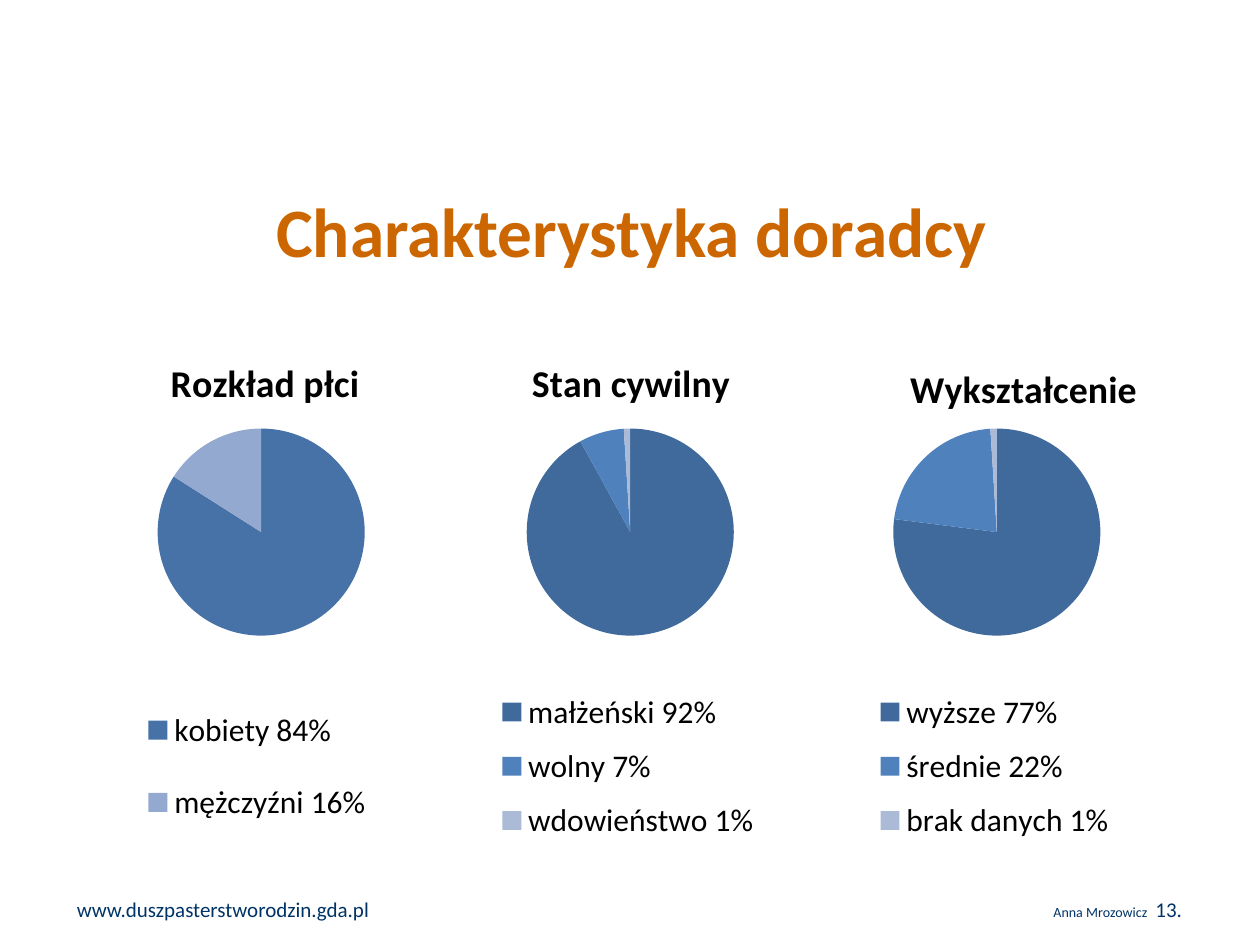
from lxml.etree import SubElement
from pptx import Presentation
from pptx.chart.data import CategoryChartData
from pptx.dml.color import RGBColor
from pptx.enum.chart import XL_CHART_TYPE, XL_LEGEND_POSITION
from pptx.enum.text import MSO_ANCHOR, PP_ALIGN
from pptx.oxml.ns import qn
from pptx.util import Cm, Pt


def style(font, size, color, bold=False):
    font.name = "Calibri"
    font.size = Pt(size)
    font.bold = bold
    font.color.rgb = RGBColor.from_string(color)


def set_layout(part, next_tag, **fractions):
    """Fix a chart part at fractions of the chart area, before its child next_tag."""
    for old in part.findall(qn("c:layout")):
        part.remove(old)
    layout = SubElement(part, qn("c:layout"))
    part.find(qn(next_tag)).addprevious(layout)
    manual = SubElement(layout, qn("c:manualLayout"))
    if next_tag == "c:pieChart":
        SubElement(manual, qn("c:layoutTarget")).set("val", "inner")
    for axis in "xy":
        SubElement(manual, qn(f"c:{axis}Mode")).set("val", "edge")
    for key, value in fractions.items():
        SubElement(manual, qn(f"c:{key}")).set("val", str(value))


prs = Presentation()
prs.slide_width, prs.slide_height = Cm(25.4), Cm(19.05)
slide = prs.slides.add_slide(prs.slide_layouts[6])

NAVY = "003366"
texts = [
    (1.3, 3.73, 22.86, 1.8, PP_ALIGN.CENTER, [("Charakterystyka doradcy", 39.6, "CC6600", True)]),
    (1.3, 17.93, 8.05, 0.81, PP_ALIGN.LEFT, [("www.duszpasterstworodzin.gda.pl", 12, NAVY, False)]),
    (18.29, 17.93, 5.79, 0.81, PP_ALIGN.RIGHT,
     [("Anna Mrozowicz ", 8, NAVY, False), (" 13.", 12, NAVY, False)]),
]
for left, top, width, height, align, runs in texts:
    frame = slide.shapes.add_textbox(Cm(left), Cm(top), Cm(width), Cm(height)).text_frame
    frame.word_wrap = True
    frame.vertical_anchor = MSO_ANCHOR.MIDDLE
    paragraph = frame.paragraphs[0]
    paragraph.alignment = align
    for wording, size, color, bold in runs:
        run = paragraph.add_run()
        run.text = wording
        style(run.font, size, color, bold)

TWO_BLUES = ["4672A8", "93A9CF"]
THREE_BLUES = ["40699C", "4F81BD", "AABAD7"]
# left edge, heading, its x and y, legend x and width, shares, slice colours
pies = [
    (1.27, "Rozkład płci", 0.26, 0.11, 0.2, 0.6,
     {"kobiety": 84, "mężczyźni": 16}, TWO_BLUES),
    (8.71, "Stan cywilny", 0.24, 0.11, 0.16, 0.69,
     {"małżeński": 92, "wolny": 7, "wdowieństwo": 1}, THREE_BLUES),
    (16.1, "Wykształcenie", 0.27, 0.12, 0.19, 0.63,
     {"wyższe": 77, "średnie": 22, "brak danych": 1}, THREE_BLUES),
]
for left, heading, heading_x, heading_y, legend_x, legend_w, shares, blues in pies:
    data = CategoryChartData()
    data.categories = [f"{group} {share}%" for group, share in shares.items()]
    data.add_series(heading, list(shares.values()))
    chart = slide.shapes.add_chart(
        XL_CHART_TYPE.PIE, Cm(left), Cm(5.72), Cm(7.82), Cm(12.01), data).chart
    style(chart.font, 18, "000000")

    chart.has_title = True
    title = chart.chart_title.text_frame
    title.text = heading
    style(title.paragraphs[0].runs[0].font, 21.6, "000000", True)

    chart.has_legend = True
    chart.legend.position = XL_LEGEND_POSITION.RIGHT
    chart.legend.include_in_layout = False
    style(chart.legend.font, 18, "000000")

    plot = chart.plots[0]
    plot.vary_by_categories = True
    for index, blue in enumerate(blues):
        fill = plot.series[0].points[index].format.fill
        fill.solid()
        fill.fore_color.rgb = RGBColor.from_string(blue)

    root = chart.element
    set_layout(root.find(".//" + qn("c:title")), "c:overlay", x=heading_x, y=heading_y)
    set_layout(root.find(".//" + qn("c:plotArea")), "c:pieChart", x=0.244, y=0.234, w=0.534, h=0.366)
    set_layout(root.find(".//" + qn("c:legend")), "c:overlay", x=legend_x, y=0.66, w=legend_w, h=0.3)

prs.save("out.pptx")
